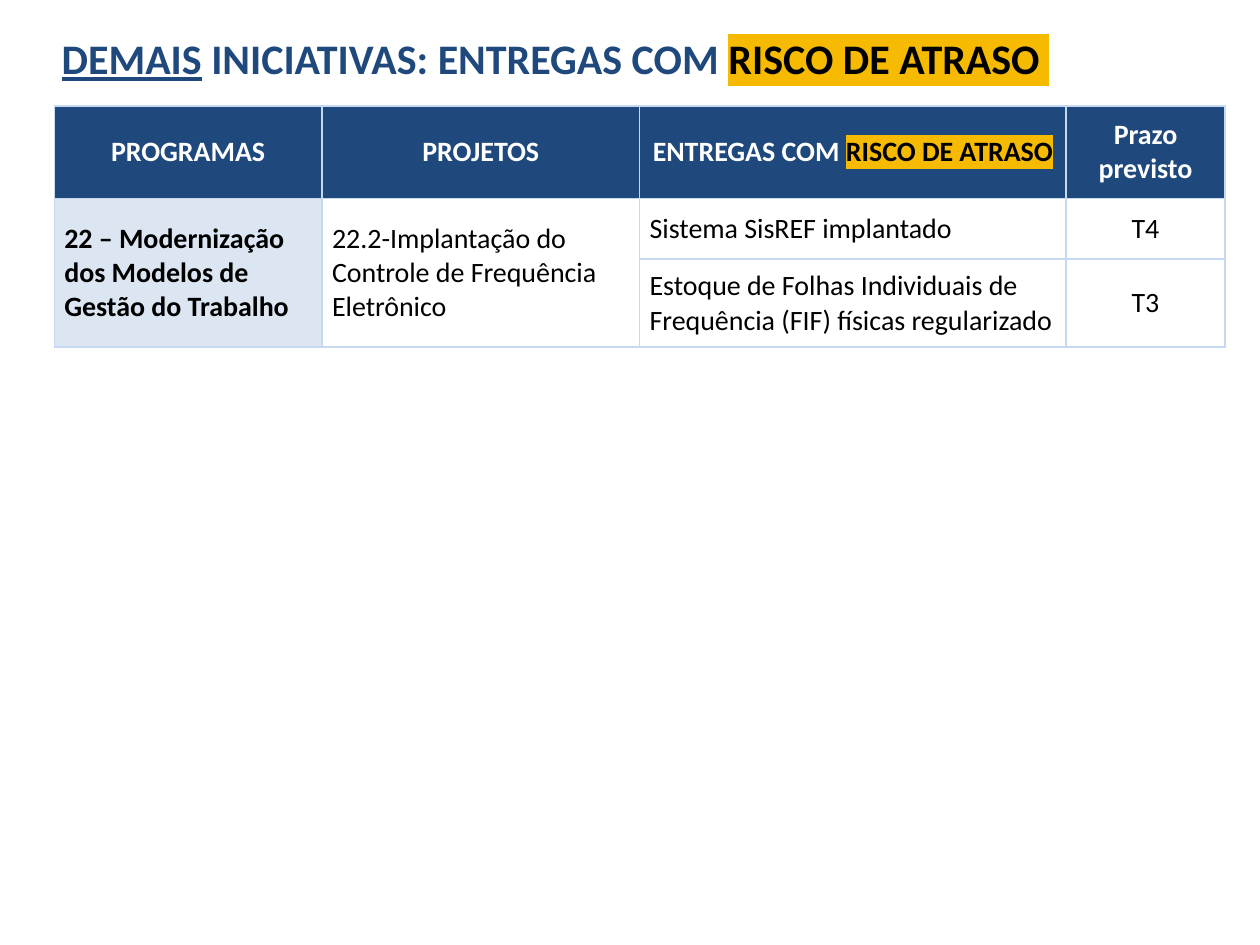
from lxml import etree
from pptx import Presentation
from pptx import util as u
from pptx.dml.color import RGBColor
from pptx.enum import text
from pptx.oxml.ns import qn

Pt = u.Pt
FONT = "Calibri"
COLORS = {
    "navy": "1F497D",
    "white": "FFFFFF",
    "black": "000000",
    "amber": "F6BB00",
    "pale": "DCE6F2",
    "border": "C6D9F1",
}
COLUMN_WIDTHS = (153, 181.5, 243.8, 90.7)
ROW_HEIGHTS = (53, 34.6, 50.2)
HEADERS = ("PROGRAMAS", "PROJETOS", "ENTREGAS COM |RISCO DE ATRASO", "Prazo previsto")
PROGRAM = "22 – Modernização dos Modelos de Gestão do Trabalho"
PROJECT = "22.2-Implantação do Controle de Frequência Eletrônico"
DELIVERIES = (
    ("Sistema SisREF implantado", "T4"),
    ("Estoque de Folhas Individuais de Frequência (FIF) físicas regularizado", "T3"),
)


def rgb(name):
    return RGBColor.from_string(COLORS[name])


def add_solid_fill(parent, color):
    fill = etree.SubElement(parent, qn("a:solidFill"))
    etree.SubElement(fill, qn("a:srgbClr"), val=COLORS[color])


def add_run(paragraph, wording, size, color, bold):
    run = paragraph.add_run()
    run.text = wording
    run.font.name = FONT
    run.font.size = Pt(size)
    run.font.bold = bold
    run.font.color.rgb = rgb(color)
    return run


def add_risk_run(paragraph, wording, size):
    """Black bold text on an amber highlight."""
    run = add_run(paragraph, wording, size, "black", True)
    fill = run.font.fill._xPr.find(qn("a:solidFill"))
    highlight = etree.Element(qn("a:highlight"))
    etree.SubElement(highlight, qn("a:srgbClr"), val=COLORS["amber"])
    fill.addnext(highlight)


def set_borders(cell):
    properties = cell._tc.get_or_add_tcPr()
    for position, side in enumerate(("a:lnL", "a:lnR", "a:lnT", "a:lnB")):
        line = etree.Element(qn(side), w=str(Pt(1)))
        add_solid_fill(line, "border")
        properties.insert(position, line)


def fill_cell(cell, wording, fill="white", color="black", bold=False, centered=False):
    cell.fill.solid()
    cell.fill.fore_color.rgb = rgb(fill)
    cell.vertical_anchor = text.MSO_ANCHOR.MIDDLE
    cell.margin_left = cell.margin_right = Pt(5.76)
    cell.margin_top = cell.margin_bottom = Pt(5.76)
    paragraph = cell.text_frame.paragraphs[0]
    paragraph.alignment = text.PP_ALIGN.CENTER if centered else text.PP_ALIGN.LEFT
    plain, _, risk = wording.partition("|")
    add_run(paragraph, plain, 16, color, bold)
    if risk:
        add_risk_run(paragraph, risk, 16)


def add_title(slide):
    title = slide.shapes.title
    title.left, title.top, title.width, title.height = Pt(28), Pt(15), Pt(683), Pt(36)
    frame = title.text_frame
    frame.word_wrap = True
    frame.auto_size = text.MSO_AUTO_SIZE.SHAPE_TO_FIT_TEXT
    frame.vertical_anchor = text.MSO_ANCHOR.TOP
    frame.margin_left = frame.margin_right = Pt(7.2)
    frame.margin_top = frame.margin_bottom = Pt(3.6)
    paragraph = frame.paragraphs[0]
    paragraph.alignment = text.PP_ALIGN.LEFT
    add_run(paragraph, "DEMAIS", 24, "navy", True).font.underline = True
    add_run(paragraph, " INICIATIVAS: ENTREGAS COM ", 24, "navy", True)
    add_risk_run(paragraph, "RISCO DE ATRASO ", 24)


def add_deliveries_table(slide):
    table = slide.shapes.add_table(
        len(ROW_HEIGHTS), len(COLUMN_WIDTHS), Pt(31), Pt(60.5),
        Pt(sum(COLUMN_WIDTHS)), Pt(sum(ROW_HEIGHTS))).table
    table.first_row = table.horz_banding = False
    for column, width in zip(table.columns, COLUMN_WIDTHS):
        column.width = Pt(width)
    for row, height in zip(table.rows, ROW_HEIGHTS):
        row.height = Pt(height)

    # Header row
    for column, header in enumerate(HEADERS):
        fill_cell(table.cell(0, column), header, "navy", "white", True, True)

    # Program and project span all their deliveries
    for column in (0, 1):
        table.cell(1, column).merge(table.cell(len(DELIVERIES), column))
    fill_cell(table.cell(1, 0), PROGRAM, "pale", bold=True)
    fill_cell(table.cell(1, 1), PROJECT)

    # One row per delivery
    for row, (delivery, deadline) in enumerate(DELIVERIES, start=1):
        fill_cell(table.cell(row, 2), delivery)
        fill_cell(table.cell(row, 3), deadline, centered=True)

    for cell in table.iter_cells():
        set_borders(cell)


def main():
    presentation = Presentation()
    presentation.slide_width, presentation.slide_height = Pt(720), Pt(540)
    slide = presentation.slides.add_slide(presentation.slide_layouts[5])
    add_deliveries_table(slide)
    add_title(slide)
    presentation.save("out.pptx")


if __name__ == "__main__":
    main()
